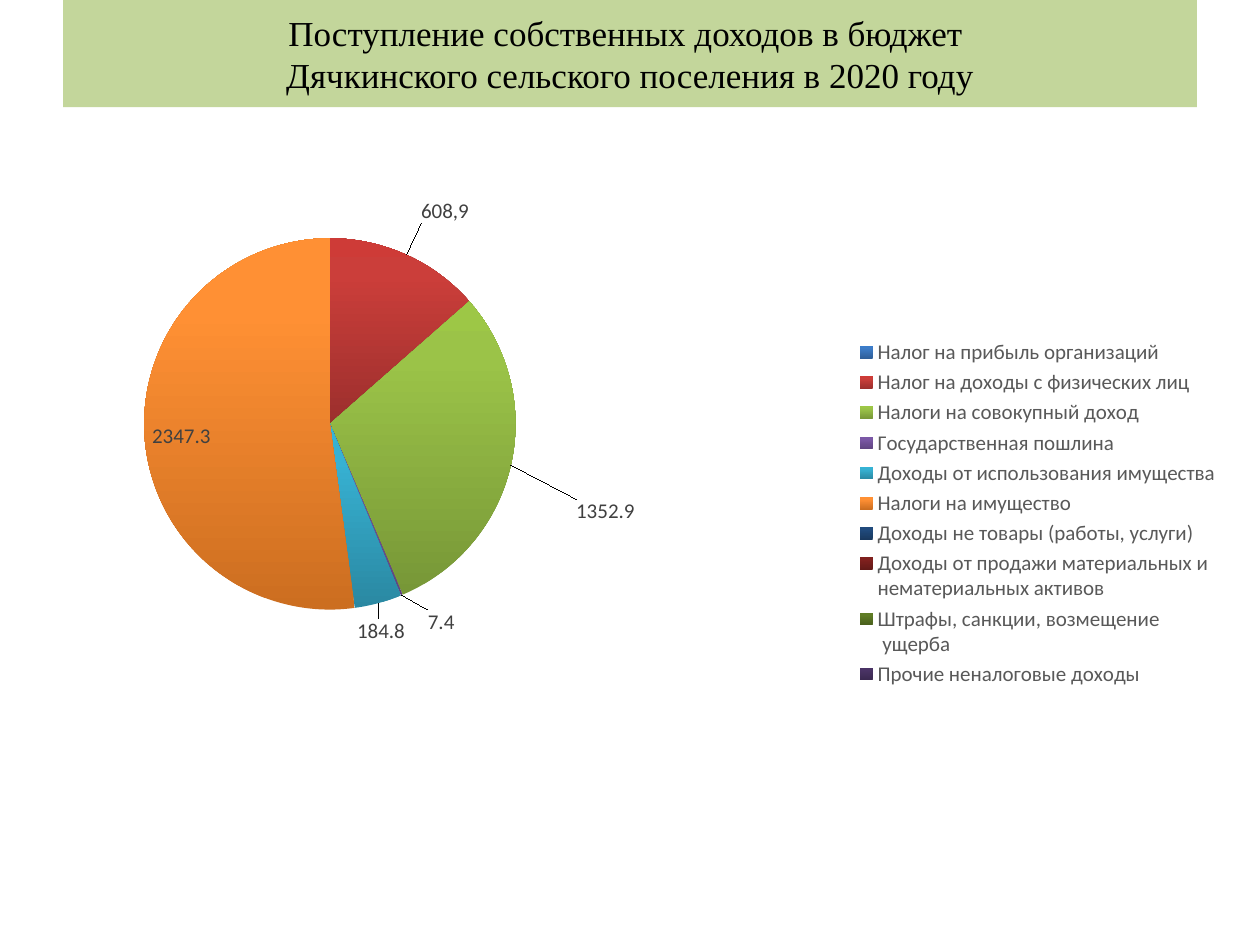
from lxml.etree import SubElement
from pptx import Presentation
from pptx.chart.data import CategoryChartData
from pptx.dml.color import RGBColor
from pptx.enum.chart import XL_CHART_TYPE, XL_LABEL_POSITION, XL_LEGEND_POSITION
from pptx.enum.text import MSO_ANCHOR, MSO_AUTO_SIZE, PP_ALIGN
from pptx.oxml.ns import qn
from pptx.util import Inches, Pt

# Content
TITLE = "Поступление собственных доходов в бюджет \vДячкинского сельского поселения в 2020 году"
INCOME = [  # name, value, gradient stops at 0, 80 and 100 %
    ("Налог на прибыль организаций", None, "2F5F99 3D7CC7 3A7CCB"),
    ("Налог на доходы с физических лиц", 608.9, "9C2F2D CB3E3A CE3B37"),
    ("Налоги на совокупный доход", 1352.9, "779737 9BC348 9DC746"),
    ("Государственная пошлина", 7.4, "5F4480 7B58A6 7C57A8"),
    ("Доходы от использования имущества", 184.8, "2A88A2 37B1D2 34B4D6"),
    ("Налоги на имущество", 2347.3, "CC6E20 FF9034 FF9136"),
    ("Доходы не товары (работы, услуги)", None, "19395F 204A7C 1E4A7E"),
    ("Доходы от продажи материальных и \nнематериальных активов", None,
     "621917 7F201E 811F1C"),
    ("Штрафы, санкции, возмещение\n ущерба", None, "495F1C 5F7C25 607E23"),
    ("Прочие неналоговые доходы", None, "39284E 4A3365 4A3366"),
]
STOPS = (0, 80, 100)
COLORS = {"band": "C3D69B", "title": "000000", "legend": "595959", "label": "404040"}

# Label shifts and frames, as shares of the chart
SHIFTS = {1: (0.01, -0.03), 2: (0.05, 0.04), 3: (0.02, 0.01), 4: (-0.02, 0.01)}
INSIDE = 5
CUSTOM = {1: "608,9"}
PLOT = (0.07, 0.12, 0.32, 0.54)
LEGEND = (0.68, 0.28, 0.32, 0.44)

# Slide grid
WIDE, HIGH = 10, 7.5
EDGE, BAND = 0.5, 0.85


def style(font, name, size, color):
    for key, value in {"name": name, "size": Pt(size), "bold": False}.items():
        setattr(font, key, value)
    font.color.rgb = RGBColor.from_string(COLORS[color])


def place(parent, index, share, target=None):
    """Give a chart part a manual layout."""
    for old in parent.findall(qn("c:layout")):
        parent.remove(old)
    layout = SubElement(parent, qn("c:layout"))
    manual = SubElement(layout, qn("c:manualLayout"))
    items = [("layoutTarget", target)] if target else []
    if len(share) == 4:
        items += [("xMode", "edge"), ("yMode", "edge")]
    items += zip("xywh", share)
    for tag, value in items:
        SubElement(manual, qn("c:" + tag)).set("val", str(value))
    parent.insert(index, layout)


deck = Presentation()
deck.slide_width, deck.slide_height = Inches(WIDE), Inches(HIGH)
slide = deck.slides.add_slide(deck.slide_layouts[5])

# Title band
title = slide.shapes.title
box = {"left": EDGE, "top": 0, "width": WIDE - 2 * EDGE, "height": BAND}
for key, value in box.items():
    setattr(title, key, Inches(value))
title.fill.solid()
title.fill.fore_color.rgb = RGBColor.from_string(COLORS["band"])
frame = title.text_frame
frame.text = TITLE
frame.auto_size = MSO_AUTO_SIZE.NONE
frame.vertical_anchor = MSO_ANCHOR.MIDDLE
frame.paragraphs[0].alignment = PP_ALIGN.CENTER
for run in frame.paragraphs[0].runs:
    style(run.font, "Times New Roman", 20, "title")

# Pie chart
data = CategoryChartData()
data.categories = [name for name, _, _ in INCOME]
data.add_series("Series 1", [value for _, value, _ in INCOME])
chart = slide.shapes.add_chart(
    XL_CHART_TYPE.PIE, Inches(EDGE), Inches(BAND), Inches(9.21), Inches(6.45), data
).chart
chart.has_title = False
style(chart.font, "Calibri", 10, "title")
plot = chart.plots[0]
plot.vary_by_categories = True
series = plot.series[0]
place(chart._chartSpace.chart.plotArea, 0, PLOT, "inner")

# Slice gradients, dark at the bottom
for i, (_, _, shades) in enumerate(INCOME):
    fill = series.points[i].format.fill
    fill.gradient()
    fill.gradient_angle = 90
    stops = series._element.xpath("c:dPt//a:gsLst")[-1]
    for old in list(stops):
        stops.remove(old)
    for pos, shade in zip(STOPS, shades.split()):
        stop = SubElement(stops, qn("a:gs"), pos=str(pos * 1000))
        SubElement(stop, qn("a:srgbClr"), val=shade)

# Value labels
labels = series.data_labels
labels.show_value = True
style(labels.font, "Calibri", 12, "label")
for i in [*SHIFTS, INSIDE]:
    label = series.points[i].data_label
    if i in CUSTOM:
        label.text_frame.text = CUSTOM[i]
        style(label.text_frame.paragraphs[0].runs[0].font, "Calibri", 12, "label")
    else:
        style(label.font, "Calibri", 12, "label")
    label.position = (
        XL_LABEL_POSITION.INSIDE_END if i == INSIDE else XL_LABEL_POSITION.OUTSIDE_END
    )
    if i in SHIFTS:
        place(series._element.xpath("c:dLbls/c:dLbl")[-1], 1, SHIFTS[i])

# Legend
chart.has_legend = True
legend = chart.legend
legend.position = XL_LEGEND_POSITION.RIGHT
legend.include_in_layout = False
style(legend.font, "Calibri", 12, "legend")
place(legend._element, 1, LEGEND)

deck.save("out.pptx")
